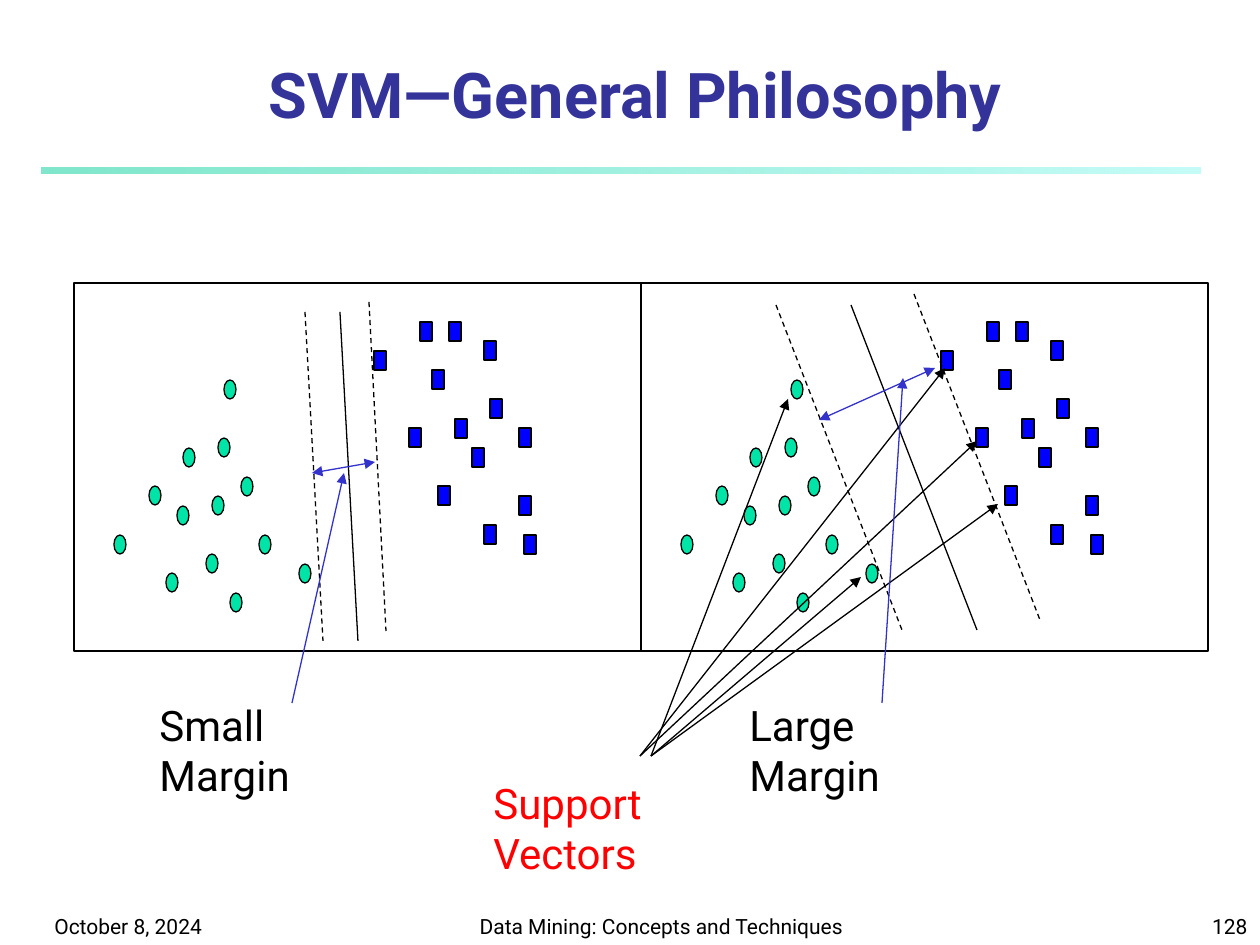
"""Build the slide comparing small and large SVM margins."""
from lxml.etree import SubElement
from pptx import Presentation
from pptx.dml.color import RGBColor
from pptx.enum.dml import MSO_LINE as Dash
from pptx.enum.shapes import MSO_CONNECTOR as Connector, MSO_SHAPE as Shape
from pptx.enum.text import MSO_ANCHOR as Anchor, PP_ALIGN as Align
from pptx.oxml.ns import qn
from pptx.util import Emu, Pt

PX = 914400 / 126
BLACK, GREEN, BLUE, INDIGO = "000000", "00E4A8", "0000FF", "3333CC"

deck = Presentation()
deck.slide_width, deck.slide_height = Emu(round(1260 * PX)), Emu(round(945 * PX))
page = deck.slides.add_slide(deck.slide_layouts[6])


def paint(color, value):
    color.rgb = RGBColor.from_string(value)


def add_text(text, *, at, size=24, color=BLACK, bold=False, align=Align.LEFT, anchor=Anchor.TOP):
    box = page.shapes.add_textbox(*[Emu(round(n * PX)) for n in at])
    box.text_frame.word_wrap = True
    box.text_frame.vertical_anchor = anchor
    para = box.text_frame.paragraphs[0]
    para.alignment = align
    span = para.add_run()
    span.text = text
    span.font.name, span.font.size, span.font.bold = "Roboto", Pt(size), bold
    paint(span.font.color, color)


rule = page.shapes.add_shape(Shape.RECTANGLE, *[Emu(round(n * PX)) for n in (42, 168, 1159, 6)])
rule.shadow.inherit = False
rule.line.fill.background()
rule.fill.gradient()
rule.fill.gradient_angle = 0
for stop, value in zip(rule.fill.gradient_stops, ("00CE98", "8FF9EF")):
    paint(stop.color, value)
for tone, alpha in zip(rule._element.spPr.iter(qn("a:srgbClr")), ("50000", "52000")):
    SubElement(tone, qn("a:alpha")).set("val", alpha)

add_text("SVM—General Philosophy", at=(42, 53, 1187, 84), size=36, color="333399",
         bold=True, align=Align.CENTER, anchor=Anchor.BOTTOM)
for text, left, width, align in (
    ("October 8, 2024", 42, 262, Align.LEFT),
    ("Data Mining: Concepts and Techniques", 462, 399, Align.CENTER),
    ("128", 998, 262, Align.RIGHT),
):
    add_text(text, at=(left, 892, width, 53), size=12, align=align, anchor=Anchor.BOTTOM)

circles = [(172, 583), (183, 516), (120, 545), (155, 496), (212, 564), (189, 458), (218, 506),
           (224, 448), (247, 487), (265, 545), (236, 603), (305, 574), (230, 390)]
squares = [(415, 438), (380, 361), (426, 332), (444, 496), (438, 380), (461, 429), (455, 332),
           (490, 351), (478, 458), (496, 409), (490, 535), (525, 438), (525, 506), (530, 545)]
parts = [(Shape.OVAL, GREEN, x - 6, y - 10, 12, 19) for x, y in circles]
parts += [(Shape.RECTANGLE, BLUE, x - 6, y - 10, 12, 19) for x, y in squares]
parts.append((Shape.RECTANGLE, None, 74, 283, 567, 368))

for shift in (0, 567):
    for kind, color, left, top, width, height in parts:
        figure = page.shapes.add_shape(
            kind, *[Emu(round(n * PX)) for n in (left + shift, top, width, height)])
        figure.shadow.inherit = False
        if color:
            figure.fill.solid()
            paint(figure.fill.fore_color, color)
        else:
            figure.fill.background()
        paint(figure.line.color, BLACK)
        figure.line.width = Pt(0.75)

for text, left, top, color in (
    ("Support Vectors", 481, 771, "FF0000"),
    ("Small Margin", 147, 693, BLACK),
    ("Large Margin", 737, 693, BLACK),
):
    add_text(text, at=(left, top, 180, 113), color=color)

borders = [(369, 302, 386, 631), (305, 312, 323, 641), (776, 305, 902, 630), (914, 294, 1040, 620)]
separators = [(340, 312, 358, 641), (851, 305, 977, 630)]
support_arrows = [(640, 756, 945, 368), (640, 756, 977, 441), (651, 756, 998, 504),
                  (651, 756, 861, 577), (651, 756, 788, 399)]
margin_spans = [(312, 473, 375, 462), (819, 420, 935, 368)]
margin_pointers = [(292, 703, 344, 473), (882, 703, 903, 378)]

for group, color, dashed, ends in (
    (borders, BLACK, True, ()),
    (separators, BLACK, False, ()),
    (support_arrows, BLACK, False, ("a:tailEnd",)),
    (margin_spans, INDIGO, False, ("a:headEnd", "a:tailEnd")),
    (margin_pointers, INDIGO, False, ("a:tailEnd",)),
):
    for points in group:
        link = page.shapes.add_connector(Connector.STRAIGHT, *[Emu(round(n * PX)) for n in points])
        paint(link.line.color, color)
        link.line.width = Pt(0.75)
        if dashed:
            link.line.dash_style = Dash.DASH
        for end in ends:
            SubElement(link.line._get_or_add_ln(), qn(end)).set("type", "triangle")
        SubElement(link._element.spPr, qn("a:effectLst"))

deck.save("out.pptx")
